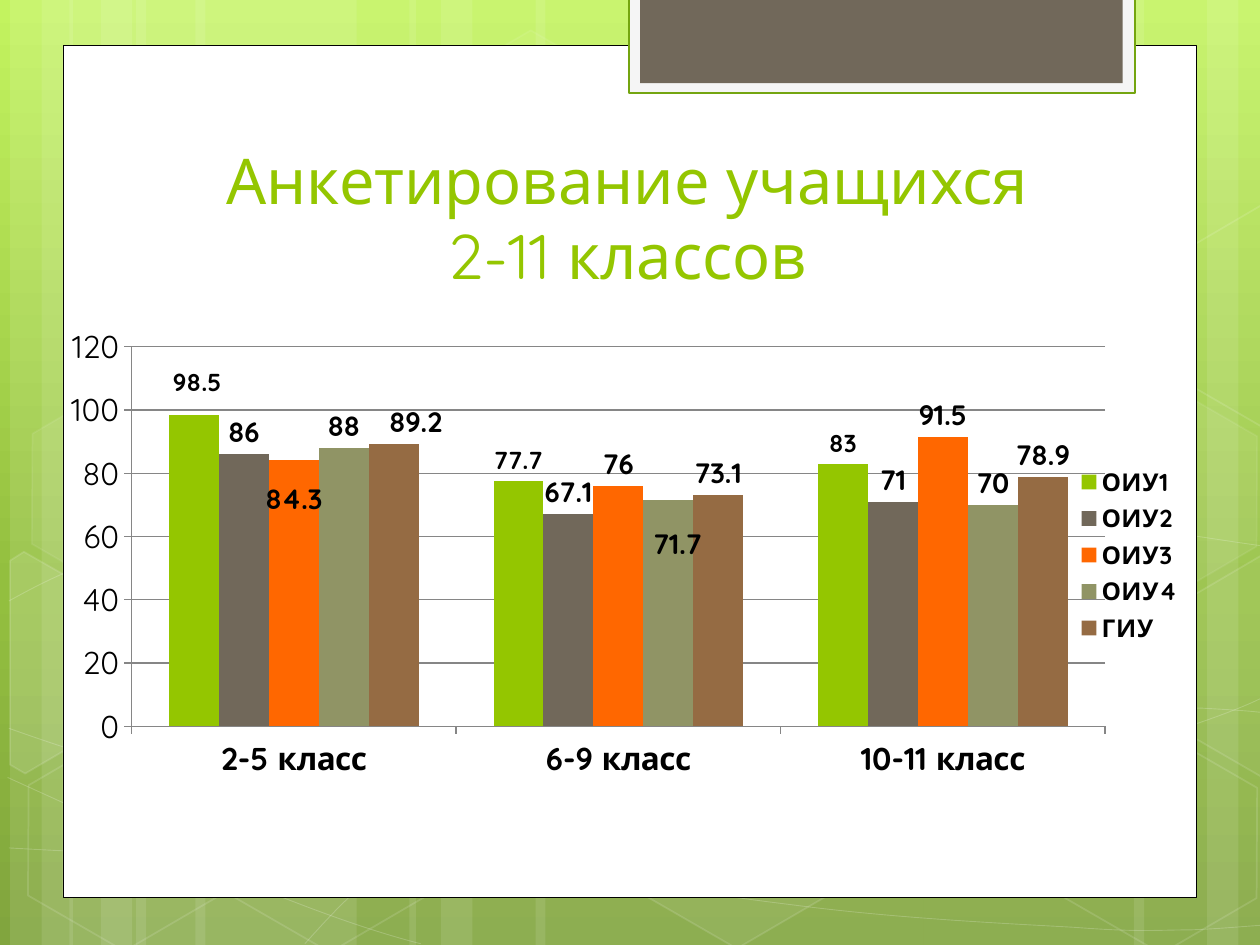
from copy import deepcopy
from lxml import etree
from pptx import Presentation
from pptx.chart.data import CategoryChartData
from pptx.dml.color import RGBColor
from pptx.enum.chart import XL_CHART_TYPE, XL_LABEL_POSITION, XL_LEGEND_POSITION, XL_TICK_MARK
from pptx.enum.shapes import MSO_SHAPE
from pptx.enum.text import MSO_ANCHOR, MSO_AUTO_SIZE, PP_ALIGN
from pptx.oxml.ns import qn
from pptx.util import Inches, Pt

RECT, HEX = MSO_SHAPE.RECTANGLE, MSO_SHAPE.HEXAGON
COLUMNS = XL_CHART_TYPE.COLUMN_CLUSTERED
OUTER, RIGHT = XL_LABEL_POSITION.OUTSIDE_END, XL_LEGEND_POSITION.RIGHT
TICK = XL_TICK_MARK.OUTSIDE
BOTTOM, CENTER, FIXED = MSO_ANCHOR.BOTTOM, PP_ALIGN.CENTER, MSO_AUTO_SIZE.NONE

WHITE = RGBColor(0xFF, 0xFF, 0xFF)
BLACK = RGBColor(0x00, 0x00, 0x00)
PALE = RGBColor(0xF5, 0xF5, 0xF5)
GRAY = RGBColor(0x86, 0x86, 0x86)
EDGE = RGBColor(0x74, 0xA5, 0x10)
GREEN = RGBColor(0x94, 0xC6, 0x00)
STONE = RGBColor(0x71, 0x68, 0x5A)
ORANGE = RGBColor(0xFF, 0x67, 0x00)
OLIVE = RGBColor(0x90, 0x94, 0x65)
BROWN = RGBColor(0x95, 0x6B, 0x43)
SKY = [(0, RGBColor(0xC3, 0xF3, 0x5F)), (0.62, RGBColor(0x93, 0xBF, 0x3F)),
       (1, RGBColor(0x81, 0xA5, 0x3E))]

WIDE, HIGH = 10, 7.5
FONT = "Quicksand"
BANDS = [(1.08, 1.75), (0.08, 0.5), (0.33, 0.83), (1.55, 1.75), (0.55, 0.5), (0.8, 0.83),
         (7.33, 1.75), (9.58, 0.5), (9, 0.83), (4.25, 3.08), (3.25, 0.5), (3.5, 0.83)]
WAVES = [
    [(0.07, 6.73), (0.61, 6.76), (1.15, 6.79), (1.9, 6.78), (2.65, 6.77), (3.58, 6.75),
     (4.58, 6.65), (5.58, 6.55), (7, 6.36), (7.92, 6.17), (8.83, 5.98), (9.77, 5.68),
     (10.07, 5.51)],
    [(0.07, 4.77), (0.36, 4.61), (0.65, 4.46), (1.21, 4.31), (1.78, 4.16), (2.59, 3.94),
     (3.47, 3.87), (4.36, 3.8), (5.44, 3.79), (6.54, 3.87), (7.64, 3.95), (9.47, 4.26),
     (10.07, 4.34)],
    [(0.06, 6.17), (1.27, 6.72), (2.47, 7.27), (3.34, 7.49)],
    [(0.07, 5.78), (0.38, 5.89), (0.7, 6), (1.28, 6.16), (1.86, 6.31), (2.73, 6.56),
     (3.57, 6.73), (4.4, 6.9), (5.45, 7.08), (6.28, 7.18), (7.11, 7.29), (8, 7.33),
     (8.53, 7.36), (9.05, 7.4), (9.19, 7.38), (9.45, 7.38), (9.71, 7.37), (9.89, 7.35),
     (10.07, 7.34)],
    [(2.42, 7.49), (2.6, 7.29), (2.78, 7.09), (3.02, 6.91), (3.26, 6.73), (3.6, 6.53),
     (3.88, 6.39), (4.16, 6.25), (4.33, 6.19), (4.7, 6.09), (5.06, 5.99), (5.73, 5.85),
     (6.08, 5.78), (6.44, 5.71), (6.49, 5.71), (6.8, 5.69), (7.11, 5.66), (7.6, 5.63),
     (7.94, 5.62), (8.29, 5.61), (8.86, 5.62), (8.86, 5.62), (9.08, 5.62), (9.31, 5.62),
     (9.53, 5.62), (9.71, 5.63), (9.88, 5.64), (9.97, 5.65), (10.06, 5.66), (10.03, 5.65),
     (10.06, 5.66)],
]
CELLS = [(3.34, 0.36, 4, 8), (4.97, 5.89, 6, 12), (0.11, 5.91, 0, 12), (0.14, 3.12, 7, 8),
         (1.74, 5.92, 0, 12), (7.53, 4.53, 10, 12), (8.34, 5.93, 0, 12), (8.34, 3.14, 7, 8)]
PARTS = [
    ([(0.08, 4.45), (0.19, 4.38), (0.96, 4.82), (0.95, 5.7), (0.2, 6.14), (0.08, 6.07)], 10),
    ([(9.26, 4.85), (10.01, 4.41), (10.09, 4.46), (10.09, 6.13), (10.02, 6.17), (9.26, 5.73)], 4),
    ([(9.26, 2.07), (10.01, 1.63), (10.1, 1.68), (10.09, 3.35), (10.02, 3.39), (9.26, 2.95)], 0),
]
CLASSES = ["2-5 класс", "6-9 класс", "10-11 класс"]
SERIES = [
    ("ОИУ1", (98.5, 77.7, 83), GREEN, 14, (0, 0.003, -0.025)),
    ("ОИУ2", (86, 67.1, 71), STONE, 16, None),
    ("ОИУ3", (84.3, 76, 91.5), ORANGE, 16, (0, 0, 0.13)),
    ("ОИУ4", (88, 71.7, 70), OLIVE, 16, (1, 0.008, 0.142)),
    ("ГИУ", (89.2, 73.1, 78.9), BROWN, 16, (0, 0.019, 0)),
]


def fade(fill, share):
    color = fill._xPr.find(".//" + qn("a:srgbClr"))
    etree.SubElement(color, qn("a:alpha")).set("val", str(share * 1000))


def bend(shape):
    lines = list(shape._element.iter(qn("a:lnTo")))
    for i in range(0, len(lines), 3):
        curve = etree.Element(qn("a:cubicBezTo"))
        lines[i].addprevious(curve)
        for line in lines[i:i + 3]:
            curve.append(line[0])
            line.getparent().remove(line)


def layout(parent, index, **values):
    for old in parent.findall(qn("c:layout")):
        parent.remove(old)
    box = etree.Element(qn("c:layout"))
    parent.insert(index, box)
    manual = etree.SubElement(box, qn("c:manualLayout"))
    for name, value in values.items():
        etree.SubElement(manual, qn("c:" + name)).set("val", str(value))


class Page:
    def __init__(self, deck):
        self.slide = deck.slides.add_slide(deck.slide_layouts[5])
        self.shapes = self.slide.shapes
        self.unit = deck.slide_width / WIDE

    def grid(self, *cells):
        return [round(cell * self.unit) for cell in cells]

    def sky(self, stops):
        fill = self.slide.background.fill
        fill.gradient()
        fill.gradient_angle = 270
        row = self.slide._element.find(".//" + qn("a:gsLst"))
        row.append(deepcopy(row[0]))
        for stop, (place, color) in zip(fill.gradient_stops, stops):
            stop.position, stop.color.rgb = place, color

    def paint(self, shape, fill=None, line=None, width=1, clear=100, faint=100):
        shape.shadow.inherit = False
        for paint, color, share in ((shape.fill, fill, clear), (shape.line.fill, line, faint)):
            if color is None or share == 0:
                paint.background()
                continue
            paint.solid()
            paint.fore_color.rgb = color
            if share < 100:
                fade(paint, share)
        if line is not None:
            shape.line.width = Pt(width)
        return shape

    def block(self, kind, box, **style):
        return self.paint(self.shapes.add_shape(kind, *self.grid(*box)), **style)

    def cell(self, left, top, clear, faint):
        shape = self.block(HEX, (left, top, 1.75, 1.52), fill=WHITE, line=WHITE,
                           clear=clear, faint=faint)
        shape.rotation = 30
        shape.adjustments[0] = 0.285

    def outline(self, points, close, **style):
        start, *rest = [self.grid(*point) for point in points]
        pen = self.shapes.build_freeform(*start)
        pen.add_line_segments(rest, close=close)
        return self.paint(pen.convert_to_shape(), line=WHITE, **style)

    def wave(self, points):
        bend(self.outline(points, False, width=0.5, faint=20))

    def title(self, text, box):
        shape = self.shapes.title
        self.shapes._spTree.append(shape._element)
        shape.left, shape.top, shape.width, shape.height = self.grid(*box)
        frame = shape.text_frame
        frame.text = text
        frame.auto_size, frame.vertical_anchor = FIXED, BOTTOM
        par = frame.paragraphs[0]
        par.alignment = CENTER
        self.font(par.font, 36, GREEN, False)

    def font(self, font, size, color=BLACK, bold=True):
        font.name, font.size, font.bold = FONT, Pt(size), bold
        font.color.rgb = color

    def chart(self, box):
        data = CategoryChartData()
        data.categories = CLASSES
        for name, values, *_ in SERIES:
            data.add_series(name, values)
        chart = self.shapes.add_chart(COLUMNS, *self.grid(*box), data).chart
        chart.has_title = False
        self.font(chart.font, 18, bold=False)
        plot = chart.plots[0]
        plot.gap_width, plot.overlap, plot.vary_by_categories = 150, 0, False
        layout(chart._chartSpace.chart.plotArea, 0, layoutTarget="inner", xMode="edge",
               yMode="edge", x=0.083, y=0.057, w=0.839, h=0.808)
        cats, vals = chart.category_axis, chart.value_axis
        vals.minimum_scale, vals.maximum_scale, vals.major_unit = 0, 120, 20
        vals.has_major_gridlines = True
        for axis, bold in ((cats, True), (vals, False)):
            axis.major_tick_mark = TICK
            axis.format.line.color.rgb = GRAY
            self.font(axis.tick_labels.font, 18, bold=bold)
        vals.major_gridlines.format.line.color.rgb = GRAY
        chart.has_legend = True
        chart.legend.position, chart.legend.include_in_layout = RIGHT, False
        self.font(chart.legend.font, 14)
        for series, (_, _, color, size, shift) in zip(plot.series, SERIES):
            series.format.fill.solid()
            series.format.fill.fore_color.rgb = color
            labels = series.data_labels
            labels.show_value, labels.position = True, OUTER
            self.font(labels.font, size)
            for leader in labels._element.findall(qn("c:showLeaderLines")):
                leader.set("val", "0")
            if shift:
                index, right, down = shift
                label = series.points[index].data_label
                label.position = OUTER
                self.font(label.font, size)
                layout(label._get_or_add_dLbl(), 1, x=right, y=down)


def main():
    deck = Presentation()
    deck.slide_width, deck.slide_height = Inches(WIDE), Inches(HIGH)
    page = Page(deck)
    page.sky(SKY)
    for left, width in BANDS:
        page.block(RECT, (left, 0, width, HIGH), fill=WHITE, clear=10)
    for wave in WAVES:
        page.wave(wave)
    for cell in CELLS:
        page.cell(*cell)
    for points, clear in PARTS:
        page.outline(points, True, fill=WHITE, clear=clear, faint=12)
    page.block(RECT, (0.5, 0.36, 9, 6.76), fill=WHITE, line=BLACK, width=0.5)
    page.block(RECT, (4.99, -0.02, 4.02, 0.76), fill=PALE, line=EDGE, width=1.25)
    page.block(RECT, (5.08, -0.02, 3.83, 0.68), fill=STONE)
    page.title("Анкетирование учащихся\v2-11 классов", (1.14, 1.12, 7.68, 1.25))
    page.chart((0.28, 2.54, 9.21, 3.73))
    deck.save("out.pptx")


if __name__ == "__main__":
    main()
